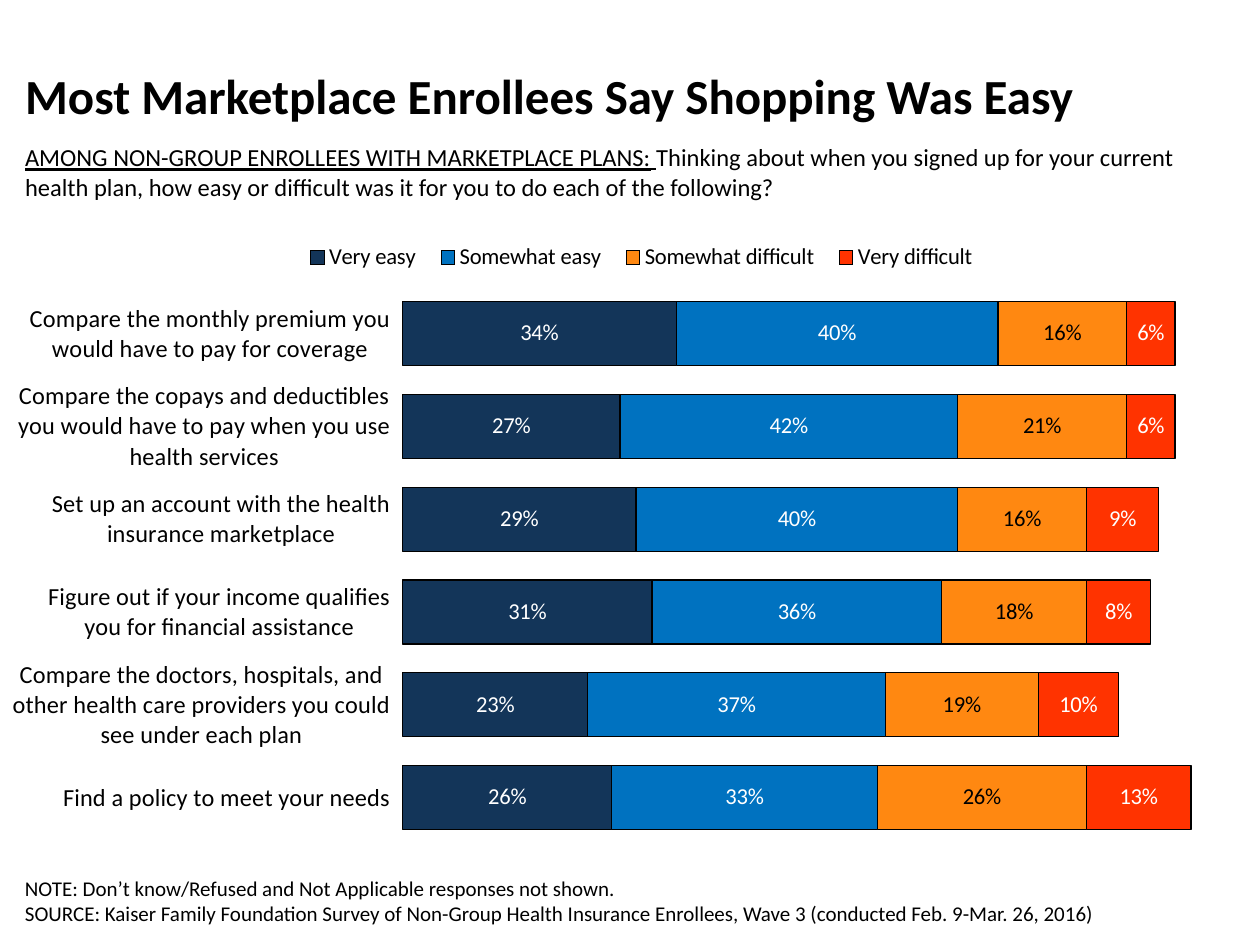
from lxml import etree
from pptx import Presentation
from pptx import util as u
from pptx.chart import data
from pptx.dml import color
from pptx.enum import chart as ch
from pptx.enum import text
from pptx.oxml import ns

Pt = u.Pt
FONT = "Calibri"
BLACK, WHITE = "000000", "FFFFFF"

CATEGORIES = [
    "Compare the monthly premium you would have to pay for coverage",
    "Compare the copays and deductibles you would have to pay when you use health services",
    "Set up an account with the health insurance marketplace",
    "Figure out if your income qualifies you for financial assistance",
    "Compare the doctors, hospitals, and other health care providers you could see under each plan",
    "Find a policy to meet your needs",
]
# name, fill, label colour, values
ANSWERS = [
    ("Very easy", "133559", WHITE, [0.34, 0.27, 0.29, 0.31, 0.23, 0.26]),
    ("Somewhat easy", "0072C0", WHITE, [0.40, 0.42, 0.40, 0.36, 0.37, 0.33]),
    ("Somewhat difficult", "FF8811", BLACK, [0.16, 0.21, 0.16, 0.18, 0.19, 0.26]),
    ("Very difficult", "FF3300", WHITE, [0.06, 0.06, 0.09, 0.08, 0.10, 0.13]),
]
QUESTION = [
    ("AMONG NON-GROUP ENROLLEES WITH MARKETPLACE PLANS:", 14, True),
    (" ", 13, True),
    ("Thinking about when you signed up for your current health plan, "
     "how easy or difficult was it for you to do each of the following?", 14, False),
]
NOTES = [
    "NOTE: Don’t know/Refused and Not Applicable responses not shown.",
    "SOURCE: Kaiser Family Foundation Survey of Non-Group Health Insurance "
    "Enrollees, Wave 3 (conducted Feb. 9-Mar. 26, 2016)",
]


def rgb(value):
    return color.RGBColor.from_string(value)


def style(font, size, hex_color=BLACK):
    font.name = FONT
    font.size = Pt(size)
    font.color.rgb = rgb(hex_color)


def add_run(p, wording, size, bold=False, underline=False):
    r = p.add_run()
    r.text = wording
    style(r.font, size)
    r.font.bold = bold
    r.font.underline = underline


def place(sp, box):
    sp.left, sp.top, sp.width, sp.height = (Pt(v) for v in box)


def add_textbox(slide, box, anchor):
    tf = slide.shapes.add_textbox(*(Pt(v) for v in box)).text_frame
    tf.word_wrap = True
    tf.vertical_anchor = anchor
    return tf


def set_layout(parent, box, inner=False):
    """Give a plot area or legend a manual place, as fractions of the chart."""
    for old in parent.findall(ns.qn("c:layout")):
        parent.remove(old)
    layout = etree.Element(ns.qn("c:layout"))
    manual = etree.SubElement(layout, ns.qn("c:manualLayout"))
    items = [("layoutTarget", "inner")] if inner else []
    items += [("xMode", "edge"), ("yMode", "edge")]
    items += [(key, str(v)) for key, v in zip("xywh", box)]
    for tag, value in items:
        etree.SubElement(manual, ns.qn("c:" + tag)).set("val", value)
    # The layout opens a plot area and follows the position of a legend
    parent.insert(0 if inner else 1, layout)


def add_title(slide, box):
    title = slide.shapes.title
    place(title, box)
    tf = title.text_frame
    tf.word_wrap = True
    tf.vertical_anchor = text.MSO_ANCHOR.MIDDLE
    p = tf.paragraphs[0]
    p.alignment = text.PP_ALIGN.LEFT
    add_run(p, "Most Marketplace Enrollees Say Shopping Was Easy", 28, bold=True)


def add_question(slide, box):
    p = add_textbox(slide, box, text.MSO_ANCHOR.TOP).paragraphs[0]
    for wording, size, underline in QUESTION:
        add_run(p, wording, size, underline=underline)


def add_answer_chart(slide, box):
    chart_data = data.CategoryChartData(number_format="0%")
    chart_data.categories = CATEGORIES
    for name, _, _, values in ANSWERS:
        chart_data.add_series(name, values)
    chart = slide.shapes.add_chart(
        ch.XL_CHART_TYPE.BAR_STACKED, *(Pt(v) for v in box), chart_data).chart
    style(chart.font, 13)
    chart.has_title = False

    # Bars and their labels
    plot = chart.plots[0]
    plot.gap_width = 45
    plot.overlap = 100
    plot.vary_by_categories = False
    for series, (_, fill, label_color, _) in zip(plot.series, ANSWERS):
        series.format.fill.solid()
        series.format.fill.fore_color.rgb = rgb(fill)
        series.format.line.color.rgb = rgb(BLACK)
        series.format.line.width = Pt(0.75)
        labels = series.data_labels
        labels.show_value = True
        labels.number_format = "0%"
        labels.number_format_is_linked = False
        style(labels.font, 13, label_color)

    # Axes
    cat_axis, val_axis = chart.category_axis, chart.value_axis
    cat_axis.reverse_order = True
    cat_axis.format.line.fill.background()
    style(cat_axis.tick_labels.font, 14)
    val_axis.minimum_scale = 0
    val_axis.maximum_scale = 1.05
    val_axis.has_major_gridlines = False
    val_axis.visible = False

    # Legend and plot area
    chart.has_legend = True
    legend = chart.legend
    legend.position = ch.XL_LEGEND_POSITION.TOP
    legend.include_in_layout = False
    style(legend.font, 13)
    set_layout(legend._element, (0.22, 0.08, 0.57, 0.05))
    plot_area = chart._chartSpace.chart.plotArea
    set_layout(plot_area, (0.31, 0.15, 0.69, 0.85), inner=True)


def add_notes(slide, box):
    tf = add_textbox(slide, box, text.MSO_ANCHOR.BOTTOM)
    for i, line in enumerate(NOTES):
        p = tf.add_paragraph() if i else tf.paragraphs[0]
        add_run(p, line, 12)


def main():
    prs = Presentation()
    prs.slide_width, prs.slide_height = Pt(720), Pt(540)
    slide = prs.slides.add_slide(prs.slide_layouts[5])
    left = 7.2
    add_answer_chart(slide, (left, 108, 705.6, 374.4))
    add_notes(slide, (left, 489.6, 655.2, 43.2))
    add_title(slide, (left, 18, 705.6, 72))
    add_question(slide, (left, 77.8, 687.6, 41))
    prs.save("out.pptx")


if __name__ == "__main__":
    main()
